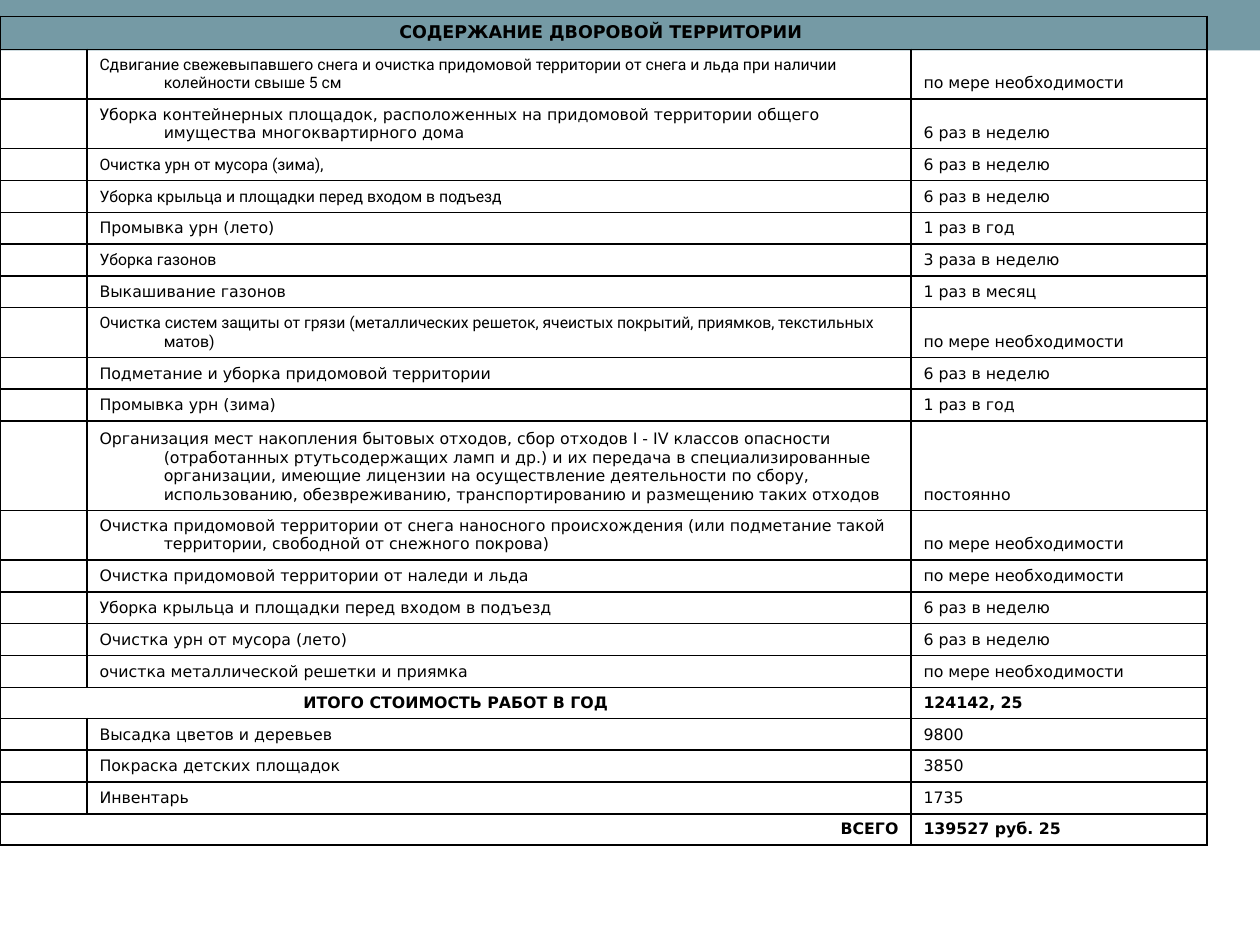
"""Build the slide with the yard maintenance schedule and its yearly cost."""
from dataclasses import dataclass

from lxml.etree import SubElement
from pptx import Presentation
from pptx.dml.color import RGBColor
from pptx.enum.shapes import MSO_SHAPE
from pptx.enum.text import MSO_ANCHOR, PP_ALIGN
from pptx.oxml import parse_xml
from pptx.oxml.ns import nsdecls, qn
from pptx.util import Inches, Pt


@dataclass(frozen=True)
class Theme:
    band: str = "759AA5"
    ink: str = "000000"
    body_font: str = "DejaVu Sans"
    narrow_font: str = "Roboto"
    heading_size: int = 10
    body_size: int = 9
    border_width: int = 1
    hanging: float = 0.51


class ScheduleSlide:
    def __init__(self, slide, theme):
        self.slide = slide
        self.theme = theme

    def band(self, left, top, width, height):
        strip = self.slide.shapes.add_shape(
            MSO_SHAPE.RECTANGLE, Inches(left), Inches(top), Inches(width), Inches(height))
        strip.shadow.inherit = False
        strip.fill.solid()
        strip.fill.fore_color.rgb = RGBColor.from_string(self.theme.band)
        strip.line.fill.background()

    def grid(self, left, top, columns, heights):
        table = self.slide.shapes.add_table(
            len(heights), len(columns), Inches(left), Inches(top),
            Inches(sum(columns)), Inches(sum(heights))).table
        table.first_row = table.horz_banding = False
        for column, width in zip(table.columns, columns):
            column.width = Inches(width)
        for row, height in zip(table.rows, heights):
            row.height = Inches(height)
            for cell in row.cells:
                self.frame(cell)
        return table

    def frame(self, cell):
        cell.fill.background()
        cell.vertical_anchor = MSO_ANCHOR.BOTTOM
        properties = cell._tc.get_or_add_tcPr()
        for position, side in enumerate(("lnL", "lnR", "lnT", "lnB")):
            properties.insert(position, parse_xml(
                f'<a:{side} {nsdecls("a")} w="{Pt(self.theme.border_width)}"><a:solidFill>'
                f'<a:srgbClr val="{self.theme.ink}"/></a:solidFill></a:{side}>'))
        closing = SubElement(cell.text_frame.paragraphs[0]._p, qn("a:endParaRPr"))
        closing.set("sz", str(self.theme.body_size * 100))

    def entry(self, cell, text, font=None, size=None, bold=False, align=PP_ALIGN.LEFT):
        paragraph = cell.text_frame.paragraphs[0]
        paragraph.alignment = align
        indent = Inches(self.theme.hanging)
        properties = paragraph._p.get_or_add_pPr()
        properties.set("marL", str(indent))
        properties.set("indent", str(-indent))
        run = paragraph.add_run()
        run.text = text
        run.font.name = font or self.theme.body_font
        run.font.size = Pt(size or self.theme.body_size)
        run.font.bold = bold
        run.font.color.rgb = RGBColor.from_string(self.theme.ink)

    def span(self, table, row, last_column, text, **style):
        cell = table.cell(row, 0)
        cell.merge(table.cell(row, last_column))
        self.entry(cell, text, bold=True, **style)


THEME = Theme()
ON_DEMAND = "по мере необходимости"
SIX_WEEKLY = "6 раз в неделю"
YEARLY = "1 раз в год"
LINE_HEIGHTS = {1: 0.24, 2: 0.38, 4: 0.71}
BODY, NARROW = THEME.body_font, THEME.narrow_font

WORKS = [
    ("Сдвигание свежевыпавшего снега и очистка придомовой территории от снега и льда "
     "при наличии колейности свыше 5 см", ON_DEMAND, 2, NARROW),
    ("Уборка контейнерных площадок, расположенных на придомовой территории общего "
     "имущества многоквартирного дома", SIX_WEEKLY, 2, BODY),
    ("Очистка урн от мусора (зима),", SIX_WEEKLY, 1, NARROW),
    ("Уборка крыльца и площадки перед входом в подъезд", SIX_WEEKLY, 1, NARROW),
    ("Промывка урн (лето)", YEARLY, 1, BODY),
    ("Уборка газонов", "3 раза в неделю", 1, NARROW),
    ("Выкашивание газонов", "1 раз в месяц", 1, BODY),
    ("Очистка систем защиты от грязи (металлических решеток, ячеистых покрытий, "
     "приямков, текстильных матов)", ON_DEMAND, 2, NARROW),
    ("Подметание и уборка придомовой территории", SIX_WEEKLY, 1, BODY),
    ("Промывка урн (зима)", YEARLY, 1, BODY),
    ("Организация мест накопления бытовых отходов, сбор отходов I - IV классов опасности "
     "(отработанных ртутьсодержащих ламп и др.) и их передача в специализированные "
     "организации, имеющие лицензии на осуществление деятельности по сбору, "
     "использованию, обезвреживанию, транспортированию и размещению таких отходов",
     "постоянно", 4, BODY),
    ("Очистка придомовой территории от снега наносного происхождения (или подметание "
     "такой территории, свободной от снежного покрова)", ON_DEMAND, 2, BODY),
    ("Очистка придомовой территории от наледи и льда", ON_DEMAND, 1, BODY),
    ("Уборка крыльца и площадки перед входом в подъезд", SIX_WEEKLY, 1, BODY),
    ("Очистка урн от мусора (лето)", SIX_WEEKLY, 1, BODY),
    ("очистка металлической решетки и приямка", ON_DEMAND, 1, BODY),
]
EXTRAS = [
    ("Высадка цветов и деревьев", "9800", 1, BODY),
    ("Покраска детских площадок", "3850", 1, BODY),
    ("Инвентарь", "1735", 1, BODY),
]
SUBTOTAL = ("ИТОГО СТОИМОСТЬ РАБОТ В ГОД", "124142, 25", PP_ALIGN.CENTER)
TOTAL = ("ВСЕГО", "139527 руб. 25", PP_ALIGN.RIGHT)


def main():
    deck = Presentation()
    deck.slide_width, deck.slide_height = Inches(10), Inches(7.5)
    page = ScheduleSlide(deck.slides.add_slide(deck.slide_layouts[6]), THEME)
    page.band(0, 0, 10, 0.4)

    single = LINE_HEIGHTS[1]
    heights = [0.25]
    for section in (WORKS, EXTRAS):
        heights += [LINE_HEIGHTS[lines] for _, _, lines, _ in section] + [single]
    schedule = page.grid(0, 0.13, [0.69, 6.54, 2.35], heights)
    page.span(schedule, 0, 2, "СОДЕРЖАНИЕ ДВОРОВОЙ ТЕРРИТОРИИ ",
              size=THEME.heading_size, align=PP_ALIGN.CENTER)

    row = 1
    for section, (label, amount, align) in ((WORKS, SUBTOTAL), (EXTRAS, TOTAL)):
        for work, frequency, _, font in section:
            page.entry(schedule.cell(row, 1), work, font=font)
            page.entry(schedule.cell(row, 2), frequency)
            row += 1
        page.span(schedule, row, 1, label, align=align)
        page.entry(schedule.cell(row, 2), amount, bold=True)
        row += 1

    deck.save("out.pptx")


if __name__ == "__main__":
    main()
